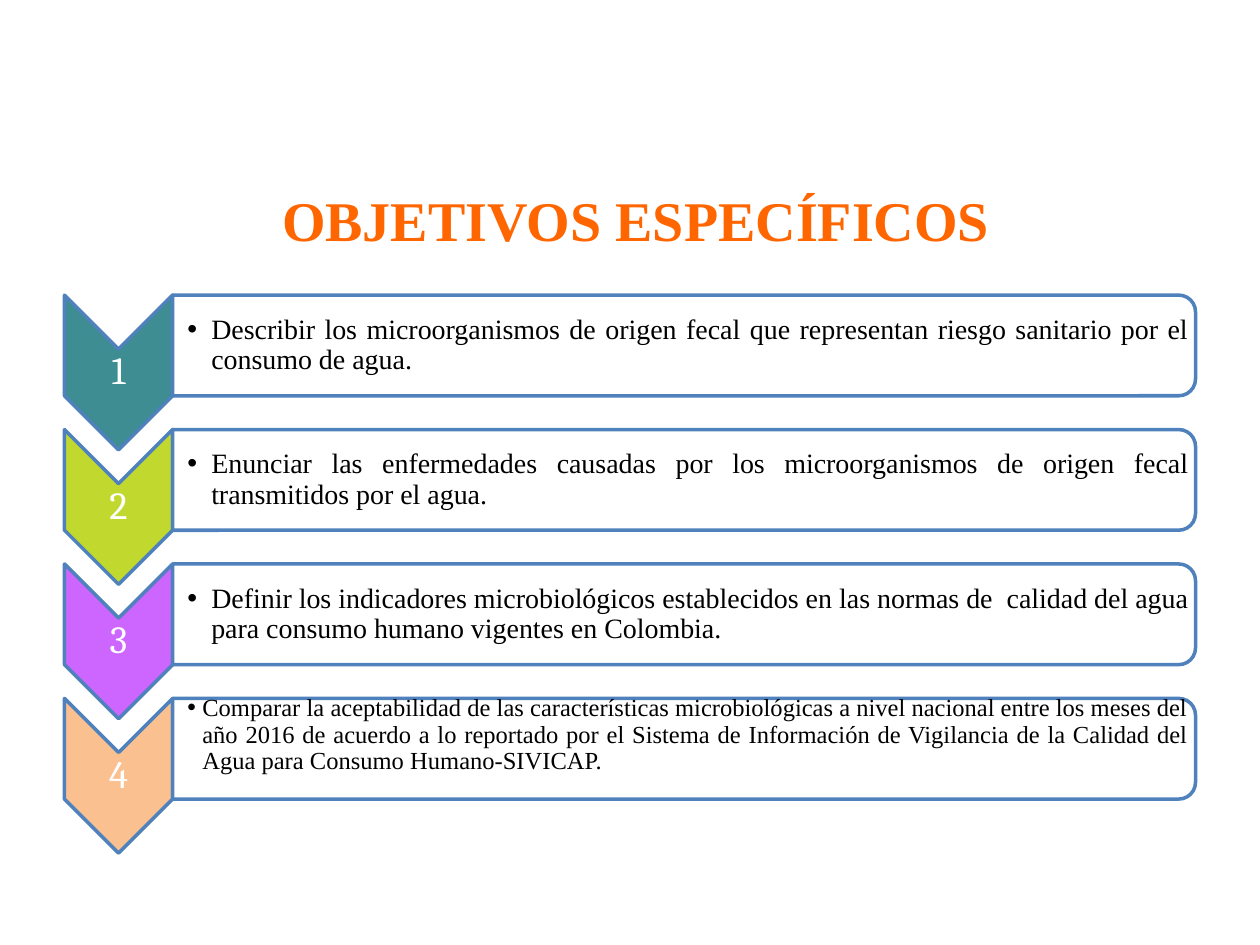
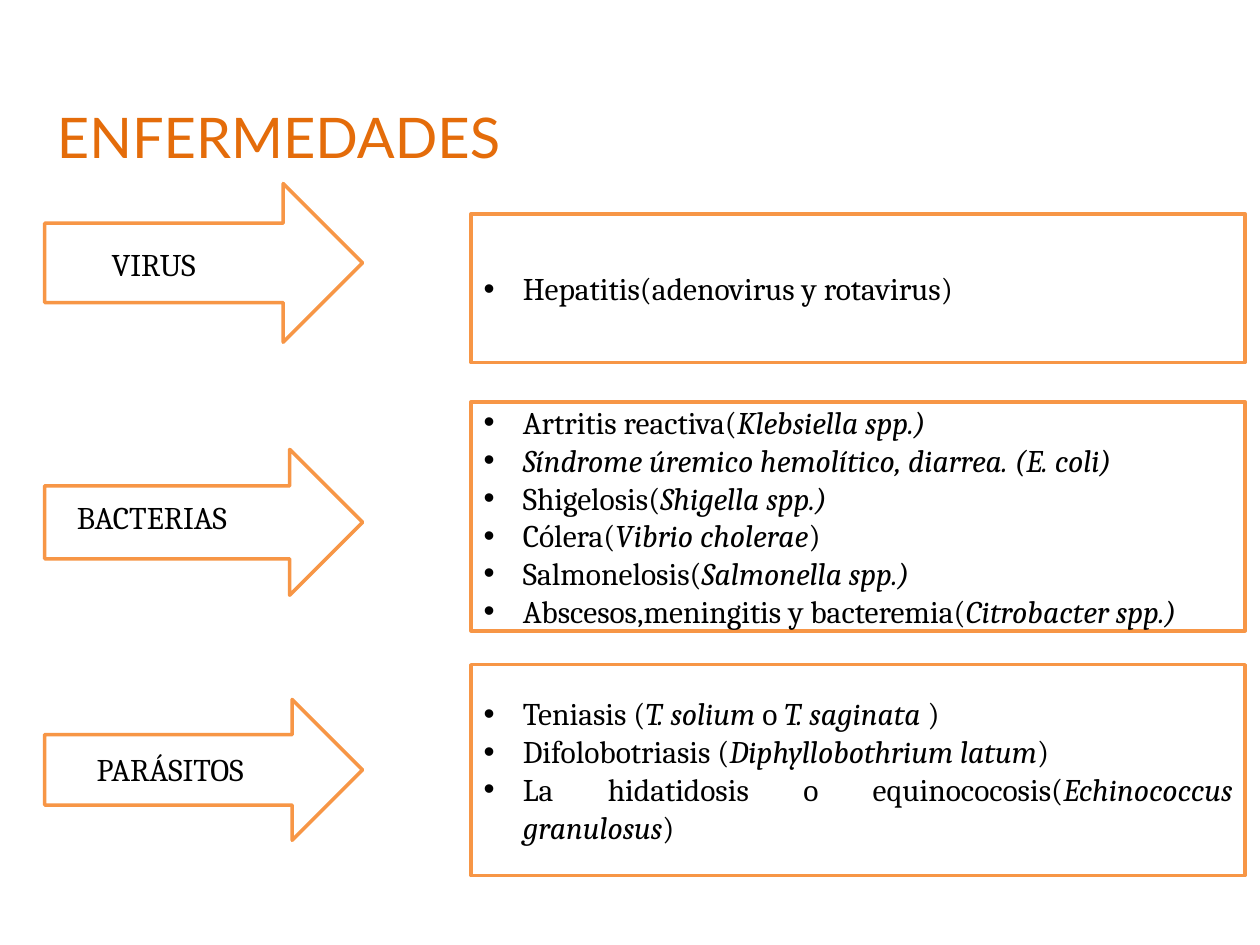
from dataclasses import dataclass

from lxml import etree
from pptx import Presentation
from pptx.dml.color import RGBColor
from pptx.enum.shapes import MSO_SHAPE
from pptx.enum.text import MSO_ANCHOR, PP_ALIGN
from pptx.oxml.ns import qn
from pptx.util import Cm, Pt

CHEVRON = MSO_SHAPE.CHEVRON
ROUNDED_PANEL = MSO_SHAPE.ROUND_2_SAME_RECTANGLE
ARROW = MSO_SHAPE.RIGHT_ARROW
RECTANGLE = MSO_SHAPE.RECTANGLE
TOP, MIDDLE = MSO_ANCHOR.TOP, MSO_ANCHOR.MIDDLE
LEFT, CENTER, JUSTIFY = PP_ALIGN.LEFT, PP_ALIGN.CENTER, PP_ALIGN.JUSTIFY


@dataclass(frozen=True)
class Theme:
    white: str = "FFFFFF"
    black: str = "000000"
    blue: str = "4F81BD"
    orange: str = "F79646"
    objectives_title: str = "FF6600"
    diseases_title: str = "E46C0A"
    serif: str = "Times New Roman"
    body: str = "Cambria"
    sans: str = "Lato"
    title_size: int = 32
    number_size: int = 22
    body_size: int = 18
    objective_size: int = 16
    small_size: int = 14
    line_width: int = 2


THEME = Theme()

OBJECTIVES_TITLE = "OBJETIVOS ESPECÍFICOS"
OBJECTIVES = [
    {"color": "3D8D93", "size": THEME.objective_size, "indent": 0.48, "lift": 0,
     "text": "Describir los microorganismos de origen fecal que representan riesgo "
             "sanitario por el consumo de agua."},
    {"color": "C1D92F", "size": THEME.objective_size, "indent": 0.48, "lift": 0,
     "text": "Enunciar las enfermedades causadas por los microorganismos de origen "
             "fecal transmitidos por el agua."},
    {"color": "CC66FF", "size": THEME.objective_size, "indent": 0.48, "lift": 0,
     "text": "Definir los indicadores microbiológicos establecidos en las normas de  "
             "calidad del agua para consumo humano vigentes en Colombia."},
    {"color": "FAC090", "size": THEME.small_size, "indent": 0.3, "lift": 0.27,
     "text": "Comparar la aceptabilidad de las características microbiológicas a nivel "
             "nacional entre los meses del año 2016 de acuerdo a lo reportado por el "
             "Sistema de Información de Vigilancia de la Calidad del Agua para Consumo "
             "Humano-SIVICAP."},
]

DISEASES_TITLE = "ENFERMEDADES"
# Asterisks enclose italic text.
DISEASES = [
    {"label": "VIRUS", "label_at": (2.0, 4.8), "arrow": (3.7, 3.2), "panel": (4.31, 3.0),
     "items": ["Hepatitis(adenovirus y rotavirus)"]},
    {"label": "BACTERIAS", "label_at": (1.3, 9.92), "arrow": (9.06, 2.94),
     "panel": (8.1, 4.62),
     "items": ["Artritis reactiva(*Klebsiella spp.)*",
               "*Síndrome úremico hemolítico, diarrea. (E. coli)*",
               "Shigelosis(*Shigella spp.)*",
               "Cólera(*Vibrio cholerae*)",
               "Salmonelosis(*Salmonella spp.)*",
               "Abscesos,meningitis y bacteremia(*Citrobacter spp.)*"]},
    {"label": "PARÁSITOS", "label_at": (1.7, 14.99), "arrow": (14.1, 2.84),
     "panel": (13.4, 4.25),
     "items": ["Teniasis (*T. solium *o *T. saginata *)",
               "Difolobotriasis (*Diphyllobothrium latum*)",
               "La hidatidosis o equinococosis(*Echinococcus granulosus*)"]},
]


def add_outlined(slide, kind, box, fill, line):
    shape = slide.shapes.add_shape(kind, *map(Cm, box))
    shape.shadow.inherit = False
    shape.fill.solid()
    shape.fill.fore_color.rgb = RGBColor.from_string(fill)
    shape.line.color.rgb = RGBColor.from_string(line)
    shape.line.width = Pt(THEME.line_width)
    return shape


def add_turned(slide, kind, box, fill):
    left, top, width, height = box
    shift = (width - height) / 2
    shape = add_outlined(slide, kind, (left + shift, top - shift, height, width),
                         fill, THEME.blue)
    shape.rotation = 90


def add_bullet(paragraph, indent):
    properties = paragraph._p.get_or_add_pPr()
    properties.set("marL", str(Cm(indent)))
    properties.set("indent", str(-Cm(indent)))
    etree.SubElement(properties, qn("a:buFont")).set("typeface", "Arial")
    etree.SubElement(properties, qn("a:buChar")).set("char", "•")


def write(shape, lines, font, size, color, align=LEFT, anchor=TOP, indent=0,
          spacing=None, insets=(0.25, 0.13, 0.25, 0.13), bold=False):
    frame = shape.text_frame
    frame.word_wrap = True
    frame.vertical_anchor = anchor
    (frame.margin_left, frame.margin_top,
     frame.margin_right, frame.margin_bottom) = map(Cm, insets)
    for index, line in enumerate(lines):
        paragraph = frame.add_paragraph() if index else frame.paragraphs[0]
        paragraph.alignment = align
        if spacing:
            paragraph.line_spacing = spacing
        if indent:
            add_bullet(paragraph, indent)
        paragraph.font.name = font
        paragraph.font.size = Pt(size)
        paragraph.font.bold = bold
        paragraph.font.color.rgb = RGBColor.from_string(color)
        for position, part in enumerate(line.split("*")):
            if part:
                run = paragraph.add_run()
                run.text = part
                if position % 2:
                    run.font.italic = True


def add_text(slide, box, text, font, size, color, **options):
    write(slide.shapes.add_textbox(*map(Cm, box)), [text], font, size, color, **options)


def build_objectives(slide):
    add_text(slide, (3.5, 3.33, 18.64, 2.16), OBJECTIVES_TITLE, THEME.serif,
             THEME.title_size, THEME.objectives_title, align=CENTER, anchor=MIDDLE,
             bold=True)
    left, first_top, pitch = 1.3, 5.95, 2.71
    chevron_width, chevron_height = 2.18, 3.12
    panel_left, panel_width, panel_height = left + chevron_width, 20.62, 2.03
    for index, objective in enumerate(OBJECTIVES):
        top = first_top + index * pitch
        chevron = (left, top, chevron_width, chevron_height)
        panel = (panel_left, top, panel_width, panel_height)
        add_turned(slide, CHEVRON, chevron, objective["color"])
        add_text(slide, chevron, str(index + 1), THEME.body, THEME.number_size,
                 THEME.white, align=CENTER, anchor=MIDDLE, spacing=0.9,
                 insets=(0.05,) * 4)
        add_turned(slide, ROUNDED_PANEL, panel, THEME.white)
        add_text(slide, (panel_left, top - objective["lift"], panel_width - 0.1,
                         panel_height),
                 objective["text"], THEME.serif, objective["size"], THEME.black,
                 align=JUSTIFY, anchor=MIDDLE, indent=objective["indent"], spacing=0.9,
                 insets=(0.3, 0.03, 0.03, 0.03))


def build_diseases(slide):
    add_text(slide, (0.9, 1.93, 10.8, 1.62), DISEASES_TITLE, THEME.sans,
             THEME.title_size, THEME.diseases_title)
    for group in DISEASES:
        arrow_top, arrow_height = group["arrow"]
        panel_top, panel_height = group["panel"]
        add_outlined(slide, ARROW, (0.9, arrow_top, 6.41, arrow_height),
                     THEME.white, THEME.orange)
        add_text(slide, (*group["label_at"], 4.6, 1.02), group["label"], THEME.body,
                 THEME.body_size, THEME.black)
        panel = add_outlined(slide, RECTANGLE, (9.5, panel_top, 15.6, panel_height),
                             THEME.white, THEME.orange)
        write(panel, group["items"], THEME.body, THEME.body_size, THEME.black,
              align=JUSTIFY, anchor=MIDDLE, indent=0.79)


def main():
    presentation = Presentation()
    presentation.slide_width, presentation.slide_height = Cm(25.4), Cm(19.05)
    blank = presentation.slide_layouts[6]
    for build in (build_objectives, build_diseases):
        build(presentation.slides.add_slide(blank))
    presentation.save("out.pptx")


if __name__ == "__main__":
    main()
